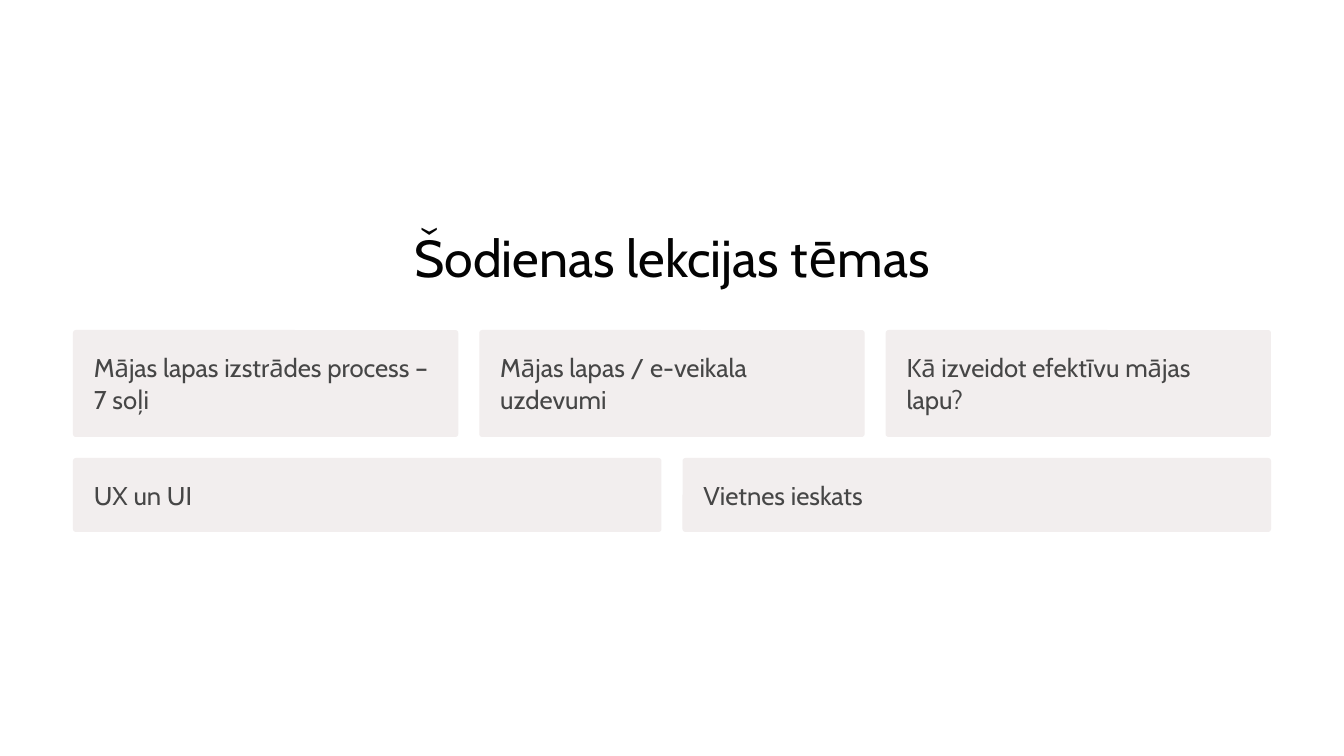
import dataclasses

import pptx
import pptx.dml.color
import pptx.enum.shapes
import pptx.enum.text
import pptx.util

EMU_PER_PX = 914400 / 84
SLIDE_WIDTH, SLIDE_HEIGHT = 1344, 756
MARGIN, GAP, PADDING, RADIUS = 73, 21, 20, 3

CARD_ROWS = [
    (330, 107, ["Mājas lapas izstrādes process – 7 soļi",
                "Mājas lapas / e-veikala uzdevumi",
                "Kā izveidot efektīvu mājas lapu?"]),
    (458, 74, ["UX un UI", "Vietnes ieskats"]),
]


@dataclasses.dataclass(frozen=True)
class Theme:
    font: str = "Cabin"
    page: str = "FFFFFF"
    card: str = "F2EEEE"
    title: str = "030303"
    body: str = "464646"
    title_size: float = 44.5
    title_leading: float = 55.5
    body_size: float = 22
    body_leading: float = 27.5


THEME = Theme()


def px(length):
    """Turn pixels into EMU."""
    return pptx.util.Emu(round(length * EMU_PER_PX))


def paint(fill, color):
    """Give a fill one solid colour."""
    fill.solid()
    fill.fore_color.rgb = pptx.dml.color.RGBColor.from_string(color)


def apply_format(target, values):
    """Set every attribute named in a dict of format values."""
    for name, value in values.items():
        setattr(target, name, value)


def write_text(shape, text, size, leading, color, align, padding=0):
    """Write one formatted paragraph into a shape."""
    frame = shape.text_frame
    inset = px(padding)
    apply_format(frame, {
        "margin_left": inset, "margin_top": inset,
        "margin_right": inset, "margin_bottom": inset,
        "word_wrap": True,
        "vertical_anchor": pptx.enum.text.MSO_ANCHOR.TOP,
    })
    para = frame.paragraphs[0]
    apply_format(para, {"alignment": align, "line_spacing": pptx.util.Pt(leading)})
    span = para.add_run()
    span.text = text
    apply_format(span.font, {"name": THEME.font, "size": pptx.util.Pt(size)})
    span.font.color.rgb = pptx.dml.color.RGBColor.from_string(color)


def add_title(page, text):
    """Add the centred heading."""
    box = page.shapes.add_textbox(px(372), px(223), px(600), px(66))
    write_text(box, text, THEME.title_size, THEME.title_leading,
               THEME.title, pptx.enum.text.PP_ALIGN.CENTER)


def add_card(page, left, top, width, height, text):
    """Add one rounded topic card."""
    card = page.shapes.add_shape(
        pptx.enum.shapes.MSO_SHAPE.ROUNDED_RECTANGLE,
        px(left), px(top), px(width), px(height))
    card.adjustments[0] = RADIUS / height
    card.shadow.inherit = False
    paint(card.fill, THEME.card)
    card.line.fill.background()
    write_text(card, text, THEME.body_size, THEME.body_leading,
               THEME.body, pptx.enum.text.PP_ALIGN.LEFT, PADDING)


def add_card_row(page, top, height, topics):
    """Share the content width equally among a row of cards."""
    step = (SLIDE_WIDTH - 2 * MARGIN + GAP) / len(topics)
    for index, topic in enumerate(topics):
        add_card(page, MARGIN + index * step, top, step - GAP, height, topic)


def main():
    """Build the lecture topics slide."""
    deck = pptx.Presentation()
    apply_format(deck, {"slide_width": px(SLIDE_WIDTH),
                        "slide_height": px(SLIDE_HEIGHT)})
    page = deck.slides.add_slide(deck.slide_layouts[6])
    paint(page.background.fill, THEME.page)
    add_title(page, "Šodienas lekcijas tēmas")
    for top, height, topics in CARD_ROWS:
        add_card_row(page, top, height, topics)
    deck.save("out.pptx")


if __name__ == "__main__":
    main()
